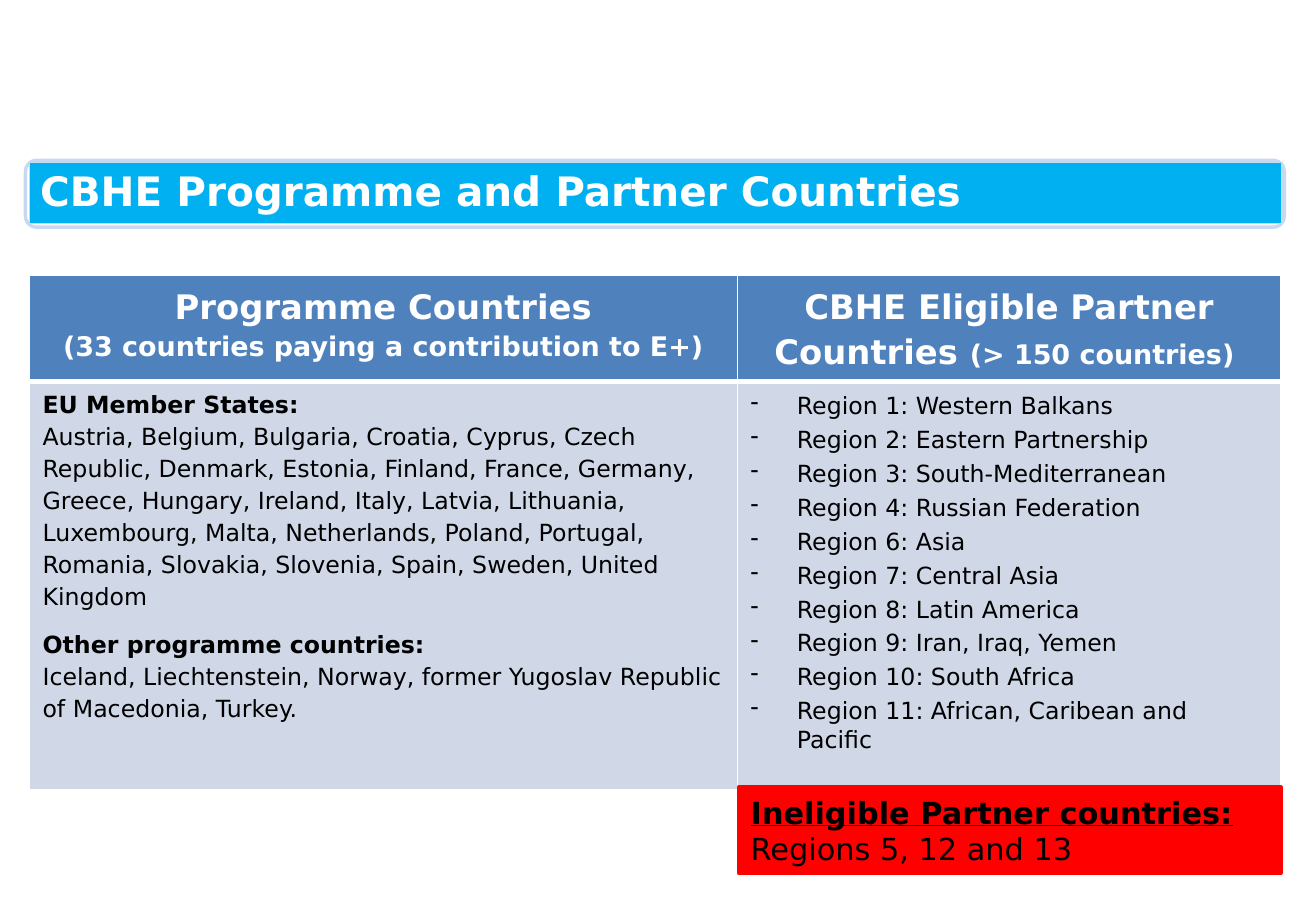
from pptx import Presentation
from pptx.dml.color import RGBColor
from pptx.enum.shapes import MSO_SHAPE
from pptx.enum.text import MSO_ANCHOR, MSO_AUTO_SIZE, PP_ALIGN
from pptx.oxml.ns import qn
from pptx.util import Inches, Pt
from lxml import etree

FONT = "DejaVu Sans"
WHITE = RGBColor(0xFF, 0xFF, 0xFF)
BLACK = RGBColor(0x00, 0x00, 0x00)
CYAN = RGBColor(0x00, 0xB0, 0xF0)
PALE_BLUE = RGBColor(0xC6, 0xD9, 0xF1)
HEADER_BLUE = RGBColor(0x4F, 0x81, 0xBD)
BODY_BLUE = RGBColor(0xD0, 0xD8, 0xE8)
RED = RGBColor(0xFF, 0x00, 0x00)
RECTANGLE = MSO_SHAPE.RECTANGLE
ROUNDED_RECTANGLE = MSO_SHAPE.ROUNDED_RECTANGLE
MIDDLE = MSO_ANCHOR.MIDDLE
NO_AUTOFIT = MSO_AUTO_SIZE.NONE
CENTER = PP_ALIGN.CENTER
LEFT = PP_ALIGN.LEFT

HEADER_CELLS = [
    [[("Programme Countries", 20)],
     [("(33 countries paying a contribution to E+)", 16)]],
    [[("CBHE Eligible Partner Countries ", 20), ("(> 150 countries) ", 16)]],
]
PROGRAMME_COUNTRIES = [
    ("EU Member States:", True, 0),
    ("Austria, Belgium, Bulgaria, Croatia, Cyprus, Czech Republic, Denmark, "
     "Estonia, Finland, France, Germany, Greece, Hungary, Ireland, Italy, "
     "Latvia, Lithuania, Luxembourg, Malta, Netherlands, Poland, Portugal, "
     "Romania, Slovakia, Slovenia, Spain, Sweden, United Kingdom", False, 10),
    ("Other programme countries:", True, 0),
    ("Iceland, Liechtenstein, Norway, former Yugoslav Republic of Macedonia, "
     "Turkey.", False, 0),
]
REGIONS = [
    "Region 1: Western Balkans",
    "Region 2: Eastern Partnership",
    "Region 3: South-Mediterranean",
    "Region 4: Russian Federation",
    "Region 6: Asia",
    "Region 7: Central Asia",
    "Region 8: Latin America",
    "Region 9: Iran, Iraq, Yemen",
    "Region 10: South Africa",
    "Region 11: African, Caribean and Pacific",
]
INELIGIBLE = [("Ineligible Partner countries:", True), ("Regions 5, 12 and 13", False)]


def add_run(paragraph, text, size, color, bold=False, underline=False):
    run = paragraph.add_run()
    run.text = text
    values = {"name": FONT, "size": Pt(size), "bold": bold, "underline": underline}
    for name, value in values.items():
        setattr(run.font, name, value)
    run.font.color.rgb = color


def paint(shape, fill, line, width):
    shape.fill.solid()
    shape.fill.fore_color.rgb = fill
    shape.line.color.rgb = line
    shape.line.width = Pt(width)


presentation = Presentation()
presentation.slide_width = Inches(10.83)
presentation.slide_height = Inches(7.5)
slide = presentation.slides.add_slide(presentation.slide_layouts[5])
shapes = slide.shapes

title_frame = shapes.add_shape(
    ROUNDED_RECTANGLE, Inches(0.21), Inches(1.32), Inches(10.36), Inches(0.55))
title_frame.shadow.inherit = False
paint(title_frame, WHITE, PALE_BLUE, 2)

title = shapes.title
title.left, title.top = Inches(0.24), Inches(1.34)
title.width, title.height = Inches(10.31), Inches(0.5)
paint(title, CYAN, PALE_BLUE, 0.75)
title_text = title.text_frame
title_format = {"auto_size": NO_AUTOFIT, "vertical_anchor": MIDDLE, "word_wrap": True}
for side in ("left", "top", "right", "bottom"):
    title_format[f"margin_{side}"] = Inches(0.09)
for name, value in title_format.items():
    setattr(title_text, name, value)
paragraph = title_text.paragraphs[0]
paragraph.alignment = LEFT
paragraph.line_spacing = 0.9
add_run(paragraph, "CBHE Programme and Partner Countries", 24, WHITE, True)
title._element.addprevious(title_frame._element)

table = shapes.add_table(
    2, 2, Inches(0.24), Inches(2.27), Inches(10.3), Inches(4.23)).table
for column, width in zip(table.columns, (5.83, 4.47)):
    column.width = Inches(width)
for row, height in zip(table.rows, (0.87, 3.36)):
    row.height = Inches(height)

for row_index, fill in enumerate((HEADER_BLUE, BODY_BLUE)):
    widths = {"L": 1, "R": 1, "T": 3 if row_index else 1, "B": 1 if row_index else 3}
    for cell in table.rows[row_index].cells:
        cell.margin_left = cell.margin_right = Inches(0.11)
        cell.margin_top = cell.margin_bottom = Inches(0.05)
        properties = cell._tc.get_or_add_tcPr()
        for side, width in widths.items():
            border = etree.SubElement(properties, qn(f"a:ln{side}"), w=str(Pt(width)))
            border_fill = etree.SubElement(border, qn("a:solidFill"))
            etree.SubElement(border_fill, qn("a:srgbClr"), val=str(WHITE))
        cell.fill.solid()
        cell.fill.fore_color.rgb = fill

for column_index, lines in enumerate(HEADER_CELLS):
    text_frame = table.cell(0, column_index).text_frame
    for index, runs in enumerate(lines):
        paragraph = text_frame.add_paragraph() if index else text_frame.paragraphs[0]
        paragraph.alignment = CENTER
        paragraph.line_spacing = 1.15
        for text, size in runs:
            add_run(paragraph, text, size, WHITE, True)

text_frame = table.cell(1, 0).text_frame
for index, (text, bold, space_after) in enumerate(PROGRAMME_COUNTRIES):
    paragraph = text_frame.add_paragraph() if index else text_frame.paragraphs[0]
    paragraph.line_spacing = 1.15
    paragraph.space_after = Pt(space_after)
    add_run(paragraph, text, 14, BLACK, bold)

region_box = shapes.add_textbox(Inches(6.08), Inches(3.17), Inches(4.46), Inches(3.06))
text_frame = region_box.text_frame
text_frame.word_wrap = True
for index, region in enumerate(REGIONS):
    paragraph = text_frame.add_paragraph() if index else text_frame.paragraphs[0]
    paragraph.space_before = Pt(3.3 if index else 0)
    properties = paragraph._p.get_or_add_pPr()
    properties.set("marL", str(Inches(0.38)))
    properties.set("indent", str(Inches(-0.38)))
    etree.SubElement(properties, qn("a:buChar"), char="-")
    add_run(paragraph, region, 14, BLACK)

ineligible_box = shapes.add_shape(
    RECTANGLE, Inches(6.08), Inches(6.48), Inches(4.46), Inches(0.71))
ineligible_box.shadow.inherit = False
paint(ineligible_box, RED, RED, 2.25)
text_frame = ineligible_box.text_frame
text_frame.word_wrap = True
text_frame.vertical_anchor = MIDDLE
for index, (text, heading) in enumerate(INELIGIBLE):
    paragraph = text_frame.add_paragraph() if index else text_frame.paragraphs[0]
    paragraph.alignment = LEFT
    add_run(paragraph, text, 18, BLACK, heading, heading)

presentation.save("out.pptx")
